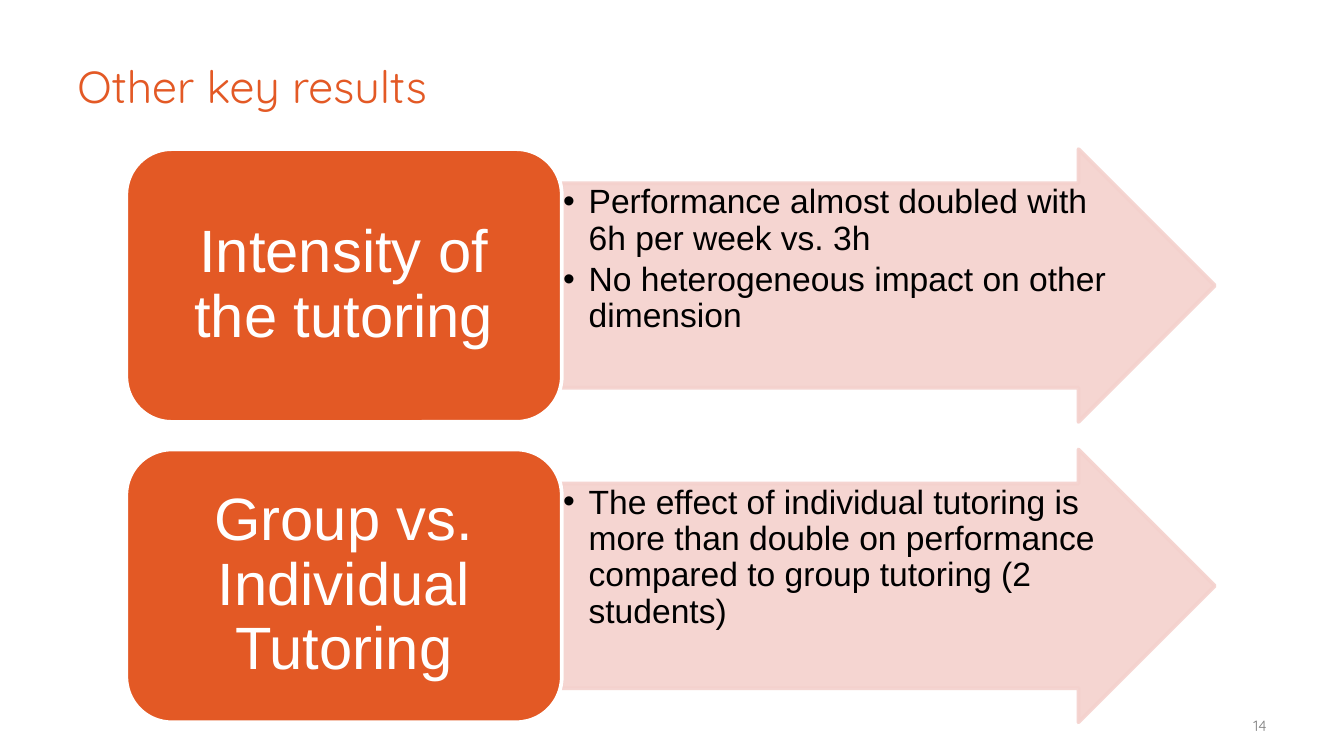
from lxml.etree import SubElement
from pptx import Presentation
from pptx.dml.color import RGBColor
from pptx.enum.shapes import MSO_SHAPE as Shape
from pptx.enum.text import MSO_ANCHOR as Anchor, MSO_AUTO_SIZE as AutoSize, PP_ALIGN as Align
from pptx.oxml.ns import qn
from pptx.util import Emu, Pt

EMU_PER_PX = 4572  # 200 px to the inch
ORANGE, PINK, WHITE, BLACK, GREY = "E35925", "F4D1CD", "FFFFFF", "000000", "7F7F7F"

ROW_TOP, ROW_STEP, ROW_HEIGHT = 222, 447, 406
CARD_LEFT, CARD_WIDTH = 188, 648
ARROW_LEFT, ARROW_WIDTH = CARD_LEFT + CARD_WIDTH, 972
LIST_INSET, LIST_WIDTH, LIST_HEIGHT = 51, 818, 304

RESULTS = [
    ("Intensity of the tutoring",
     ["Performance almost doubled with 6h per week vs. 3h",
      "No heterogeneous impact on other dimension"]),
    ("Group vs. Individual Tutoring",
     ["The effect of individual tutoring is more than double on performance "
      "compared to group tutoring (2 students)"]),
]


def px(length):
    return Emu(length * EMU_PER_PX)


def color(hex_string):
    return RGBColor.from_string(hex_string)


def place(shape, left, top, width, height):
    shape.left, shape.top = px(left), px(top)
    shape.width, shape.height = px(width), px(height)


def set_frame(frame, anchor, inset_x, inset_y):
    frame.word_wrap = True
    frame.auto_size = AutoSize.NONE
    frame.vertical_anchor = anchor
    frame.margin_left = frame.margin_right = px(inset_x)
    frame.margin_top = frame.margin_bottom = px(inset_y)


def format_paragraph(paragraph, font, size, hex_string, align, spacing=1.0, after=0):
    paragraph.alignment = align
    paragraph.line_spacing = spacing
    paragraph.space_before, paragraph.space_after = Pt(0), Pt(after)
    for run in paragraph.runs:
        run.font.name, run.font.size = font, Pt(size)
        run.font.color.rgb = color(hex_string)


def add_bullet(paragraph):
    properties = paragraph._p.get_or_add_pPr()
    properties.set("marL", str(px(38)))
    properties.set("indent", str(px(-38)))
    bullet_color = SubElement(properties, qn("a:buClr"))
    SubElement(bullet_color, qn("a:srgbClr"), val=BLACK)
    SubElement(properties, qn("a:buFont"), typeface="Arial")
    SubElement(properties, qn("a:buChar"), char="•")


def add_block(slide, kind, left, top, width, fill, line):
    block = slide.shapes.add_shape(kind, px(left), px(top), px(width), px(ROW_HEIGHT))
    block.shadow.inherit = False
    block.fill.solid()
    block.fill.fore_color.rgb = color(fill)
    block.line.color.rgb = color(line)
    block.line.width = Pt(2)
    return block


def add_arrow(slide, top):
    arrow = add_block(slide, Shape.RIGHT_ARROW, ARROW_LEFT, top, ARROW_WIDTH, PINK, PINK)
    arrow.adjustments[0], arrow.adjustments[1] = 0.75, 0.5
    for tint in arrow._element.spPr.iter(qn("a:srgbClr")):
        SubElement(tint, qn("a:alpha"), val="90000")


def fill_findings(slide, findings, top, points):
    slide.shapes._spTree.append(findings._element)  # bring in front of the arrow
    place(findings, ARROW_LEFT, top + LIST_INSET, LIST_WIDTH, LIST_HEIGHT)
    frame = findings.text_frame
    set_frame(frame, Anchor.TOP, 2, 2)
    frame.text = "\n".join(points)
    for paragraph in frame.paragraphs:
        format_paragraph(paragraph, "Arial", 18, BLACK, Align.LEFT, 0.9, 2.7)
        add_bullet(paragraph)


def add_topic_card(slide, top, topic):
    card = add_block(slide, Shape.ROUNDED_RECTANGLE, CARD_LEFT, top, CARD_WIDTH, ORANGE, WHITE)
    set_frame(card.text_frame, Anchor.MIDDLE, 26, 14)
    card.text_frame.text = topic
    format_paragraph(card.text_frame.paragraphs[0], "Arial", 32, WHITE, Align.CENTER, 0.9)


def fill_title(title, heading):
    place(title, 100, 32, 1800, 190)
    set_frame(title.text_frame, Anchor.MIDDLE, 15, 8)
    title.text_frame.text = heading
    format_paragraph(title.text_frame.paragraphs[0], "Quicksand", 24, ORANGE, Align.LEFT)


def add_page_number(slide, number):
    page_number = slide.shapes.add_textbox(px(1714), px(1058), px(186), px(36))
    set_frame(page_number.text_frame, Anchor.TOP, 15, 8)
    page_number.text_frame.text = number
    format_paragraph(page_number.text_frame.paragraphs[0], "Quicksand", 8, GREY, Align.RIGHT)


def main():
    deck = Presentation()
    deck.slide_width, deck.slide_height = px(2000), px(1125)
    slide = deck.slides.add_slide(deck.slide_layouts.get_by_name("Two Content"))

    # Heading and page number
    fill_title(slide.shapes.title, "Other key results")
    add_page_number(slide, "14")

    # One row per result: arrow, findings, topic card
    findings_lists = list(slide.placeholders)[1:3]
    for row, (findings, (topic, points)) in enumerate(zip(findings_lists, RESULTS)):
        top = ROW_TOP + row * ROW_STEP
        add_arrow(slide, top)
        fill_findings(slide, findings, top, points)
        add_topic_card(slide, top, topic)

    deck.save("out.pptx")


if __name__ == "__main__":
    main()
